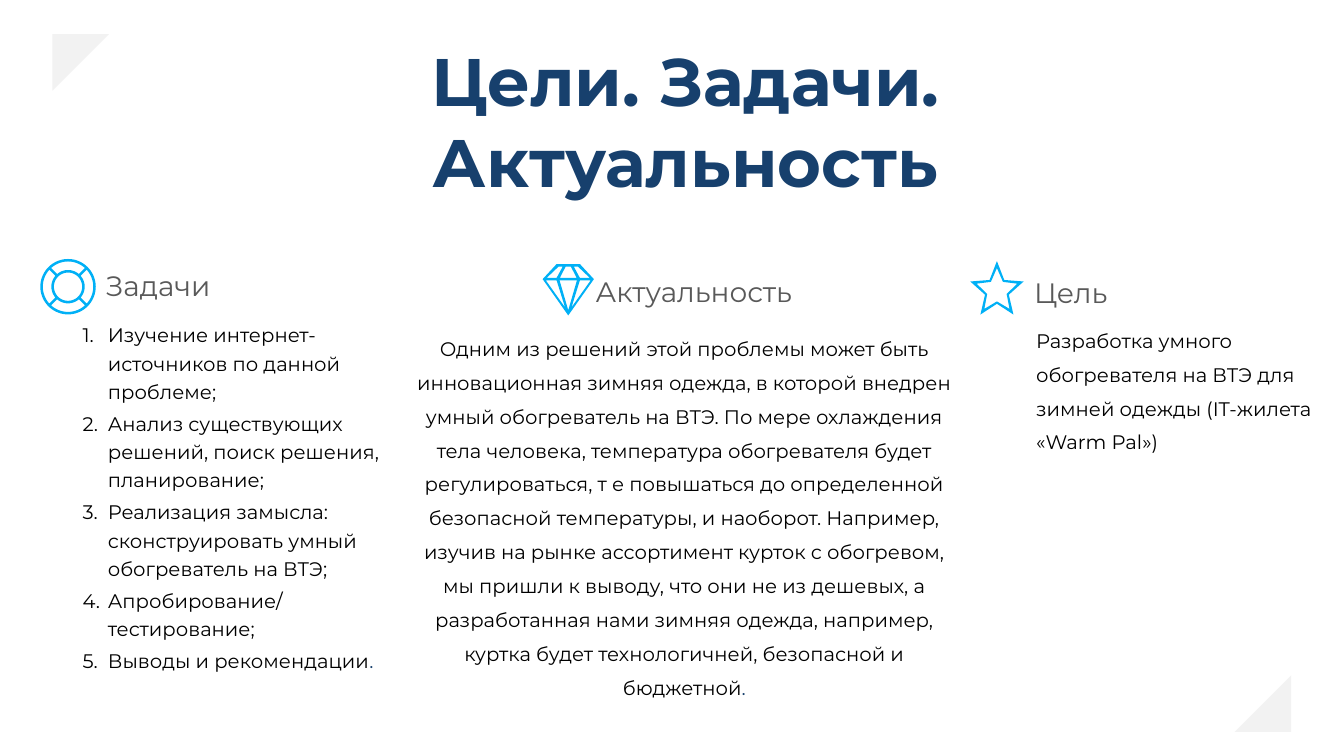
"""Build the slide on goals, tasks and relevance of a heated winter vest."""
from dataclasses import dataclass
from math import asin, cos, pi, sin

from lxml.etree import SubElement
from pptx import Presentation
from pptx.dml.color import RGBColor
from pptx.enum.shapes import MSO_SHAPE as Shape
from pptx.enum.text import MSO_ANCHOR as Anchor, MSO_AUTO_SIZE as AutoSize, PP_ALIGN as Align
from pptx.oxml.ns import qn
from pptx.util import Pt


@dataclass(frozen=True)
class Theme:
    """Typeface, colours and type sizes of the slide."""
    face: str = "Montserrat"
    navy: RGBColor = RGBColor(0x17, 0x40, 0x6D)
    black: RGBColor = RGBColor(0, 0, 0)
    grey: RGBColor = RGBColor(0x59, 0x59, 0x59)
    pale: RGBColor = RGBColor(0xF2, 0xF2, 0xF2)
    blue: RGBColor = RGBColor(0x00, 0xB0, 0xF6)
    title: float = 48
    heading: float = 20
    body: float = 14


THEME = Theme()
TASKS = [
    "Изучение интернет-источников по данной проблеме;",
    "Анализ существующих решений, поиск решения, планирование;",
    "Реализация замысла: сконструировать умный обогреватель на ВТЭ;",
    "Апробирование/тестирование;",
    "Выводы и рекомендации",
]
RELEVANCE = (
    "Одним из решений этой проблемы может быть инновационная зимняя одежда, в которой "
    "внедрен умный обогреватель на ВТЭ. По мере охлаждения тела человека, температура "
    "обогревателя будет регулироваться, т е повышаться до определенной безопасной "
    "температуры, и наоборот. Например, изучив на рынке ассортимент курток с обогревом, "
    "мы пришли к выводу, что они не из дешевых, а разработанная нами зимняя одежда, "
    "например, куртка будет технологичней, безопасной и бюджетной"
)
GOAL = "Разработка умного обогревателя на ВТЭ для зимней одежды (IT-жилета «Warm Pal»)"


def set_font(para, size, color, bold=False):
    """Give a paragraph its typeface, size and colour."""
    font = para.font
    font.name, font.size, font.bold = THEME.face, Pt(size), bold
    font.color.rgb = color


def set_frame(frame, inset_x, inset_y, anchor=Anchor.TOP):
    """Wrap a text frame and set its margins and anchor."""
    frame.word_wrap = True
    frame.auto_size = AutoSize.SHAPE_TO_FIT_TEXT
    frame.vertical_anchor = anchor
    frame.margin_left = frame.margin_right = Pt(inset_x)
    frame.margin_top = frame.margin_bottom = Pt(inset_y)


def add_title(page, text):
    """Place and format the title placeholder."""
    title = page.shapes.title
    title.left, title.top, title.width, title.height = Pt(195.1), Pt(24.5), Pt(589), Pt(123.8)
    set_frame(title.text_frame, 7.2, 3.6)
    para = title.text_frame.paragraphs[0]
    para.text, para.alignment = text, Align.CENTER
    set_font(para, THEME.title, THEME.navy, bold=True)


def add_heading(page, left, top, width, text):
    """Add a column heading."""
    box = page.shapes.add_textbox(Pt(left), Pt(top), Pt(width), Pt(31.7))
    set_frame(box.text_frame, 7.2, 3.6, Anchor.MIDDLE)
    para = box.text_frame.paragraphs[0]
    para.text = text
    set_font(para, THEME.heading, THEME.grey)


def add_number(para):
    """Number a paragraph with a hanging indent."""
    props = para._p.get_or_add_pPr()
    props.set("marL", str(Pt(18)))
    props.set("indent", str(-Pt(18)))
    color = SubElement(props, qn("a:buClr"))
    SubElement(color, qn("a:srgbClr"), val=str(THEME.black))
    SubElement(props, qn("a:buAutoNum"), type="arabicPeriod")


def add_body(page, left, top, width, height, texts, spacing=1.44,
             align=Align.LEFT, numbered=False, navy_end=""):
    """Add body paragraphs, optionally numbered or closed by a navy mark."""
    box = page.shapes.add_textbox(Pt(left), Pt(top), Pt(width), Pt(height))
    frame = box.text_frame
    set_frame(frame, 8.64, 4.32)
    for index, text in enumerate(texts):
        para = frame.add_paragraph() if index else frame.paragraphs[0]
        para.text, para.alignment, para.line_spacing = text, align, spacing
        if index:
            para.space_before = Pt(2.8)
        if numbered:
            add_number(para)
        set_font(para, THEME.body, THEME.black)
    if navy_end:
        span = para.add_run()
        span.text = navy_end
        span.font.color.rgb = THEME.navy


def paint(shape, color):
    """Fill a shape with a flat colour, without line or shadow."""
    shape.shadow.inherit = False
    shape.fill.solid()
    shape.fill.fore_color.rgb = color
    shape.line.fill.background()


def add_corner(page, left, top, rotation):
    """Add a pale corner triangle."""
    corner = page.shapes.add_shape(Shape.RIGHT_TRIANGLE, Pt(left), Pt(top), Pt(40.3), Pt(40.3))
    corner.rotation = rotation
    paint(corner, THEME.pale)


def add_icon(page, origin_x, origin_y, contours):
    """Add a blue icon whose first contour is the outline and the rest its holes."""
    placed = [[(Pt(origin_x + x), Pt(origin_y + y)) for x, y in contour] for contour in contours]
    builder = page.shapes.build_freeform(*placed[0][0])
    builder.add_line_segments(placed[0][1:])
    for contour in placed[1:]:
        builder.move_to(*contour[0])
        builder.add_line_segments(contour[1:])
    paint(builder.convert_to_shape(), THEME.blue)


def arc(radius, start, end, steps):
    """List points along an arc around the icon's centre."""
    angles = [start + (end - start) * step / steps for step in range(steps + 1)]
    return [(radius * cos(angle), radius * sin(angle)) for angle in angles]


def lifebuoy_contours():
    """Outline a ring with four windows and an open centre."""
    contours = [arc(19.8, 0, 2 * pi, 72), arc(10.1, 0, 2 * pi, 48)]
    wide, narrow = (pi / 4 - asin(0.9 / radius) for radius in (18, 11.9))
    for quarter in range(4):
        middle = quarter * pi / 2
        contours.append(arc(18, middle - wide, middle + wide, 18)
                        + arc(11.9, middle + narrow, middle - narrow, 18))
    return contours


def star_contour(tip, notch):
    """Outline a five-pointed star, slightly narrowed."""
    radii = [tip, notch] * 5
    return [(0.95 * radius * sin(step * pi / 5), -radius * cos(step * pi / 5))
            for step, radius in enumerate(radii)]


def diamond_contours():
    """Outline a cut diamond with its facets."""
    outline = [(-8.3, 0), (8.3, 0), (18.3, 10.8), (0, 36.7), (-18.3, 10.8)]
    middle = [[(-1.9, 1.9), (1.9, 1.9), (6, 9.9), (-6, 9.9)],
              [(-6.2, 11.7), (6.2, 11.7), (0, 33)]]
    left = [[(-7, 1.9), (-4, 1.9), (-8.3, 9.9), (-15.4, 9.9)],
            [(-16, 11.7), (-8.3, 11.7), (-2.3, 31)]]
    right = [[(-x, y) for x, y in facet] for facet in left]
    return [outline] + middle + left + right


def main():
    """Compose and save the slide."""
    deck = Presentation()
    deck.slide_width, deck.slide_height = Pt(960), Pt(540)
    page = deck.slides.add_slide(deck.slide_layouts[5])

    add_title(page, "Цели. Задачи. Актуальность")
    add_corner(page, 37.4, 24.5, 90)
    add_corner(page, 882, 482.4, 270)

    add_icon(page, 48.6, 204.8, lifebuoy_contours())
    add_heading(page, 68.4, 187.9, 110.9, "Задачи")
    add_body(page, 50.4, 223.2, 232.6, 260.6, TASKS, spacing=1.2, numbered=True, navy_end=".")

    add_icon(page, 405.9, 188.6, diamond_contours())
    add_heading(page, 418.3, 192.2, 162.7, "Актуальность")
    add_body(page, 285.1, 229, 407.5, 190, [RELEVANCE], align=Align.CENTER, navy_end=".")

    add_icon(page, 712.1, 207.6, [star_contour(21.1, 9.4), star_contour(16.1, 7.7)])
    add_heading(page, 731.5, 193, 150.5, "Цель")
    add_body(page, 731.5, 223.2, 226.8, 89.3, [GOAL])

    deck.save("out.pptx")


if __name__ == "__main__":
    main()
